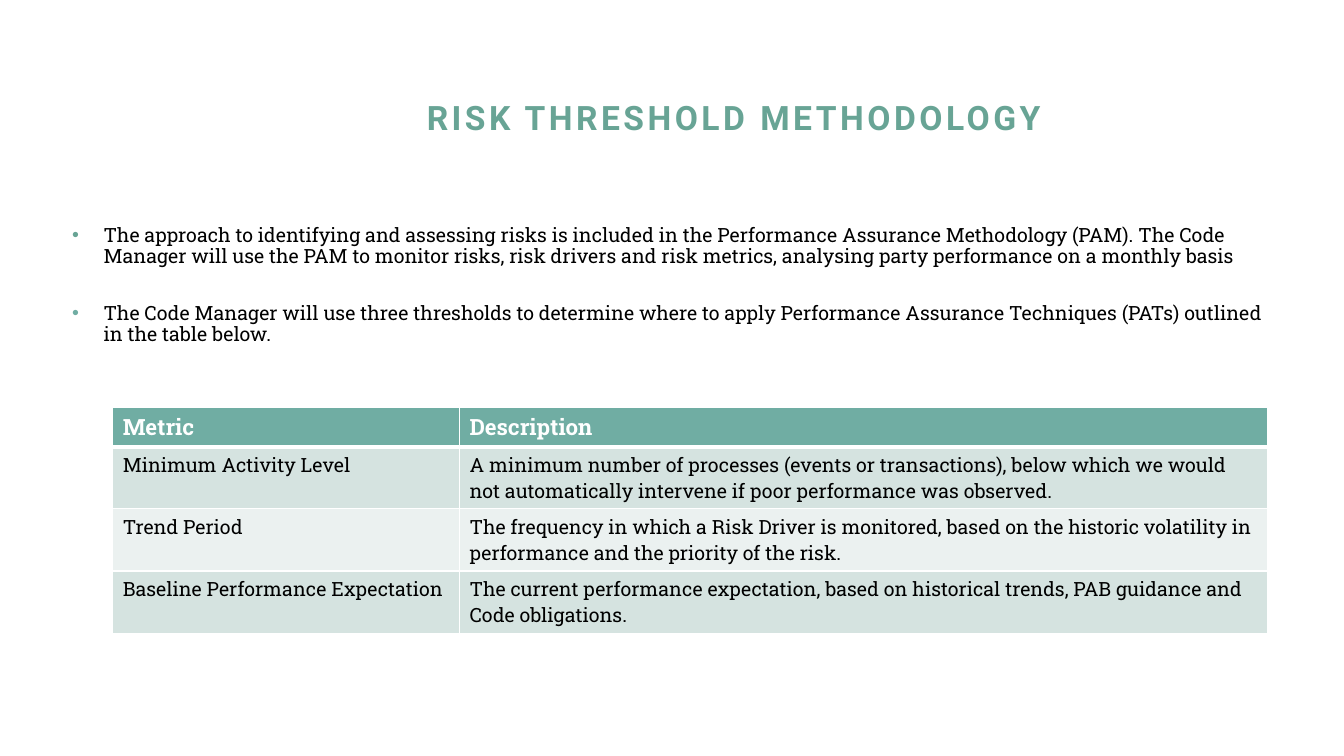
from dataclasses import dataclass

import pptx
import pptx.dml.color
import pptx.enum.text
import pptx.oxml
import pptx.oxml.ns
import pptx.util
from pptx.util import Cm


@dataclass(frozen=True)
class Theme:
    heading_font: str = "Roboto"
    body_font: str = "Roboto Slab"
    title: str = "68A495"
    header: str = "70ADA3"
    bands: tuple = ("D5E3E0", "EBF1F0")
    text: str = "000000"
    white: str = "FFFFFF"
    title_size: int = 24
    header_size: int = 16
    body_size: int = 14


THEME = Theme()

BULLETS = [
    ("The approach to identifying and assessing risks is included in the Performance Assurance "
     "Methodology (PAM). The Code Manager will use the PAM to monitor risks, risk drivers and "
     "risk metrics, analysing party performance on a monthly basis", THEME.title),
    ("The Code Manager will use three thresholds to determine where to apply Performance "
     "Assurance Techniques (PATs) outlined in the table below.", THEME.header),
]

METRICS = [
    ("Metric", "Description"),
    ("Minimum Activity Level",
     "A minimum number of processes (events or transactions), below which we would not "
     "automatically intervene if poor performance was observed."),
    ("Trend Period",
     "The frequency in which a Risk Driver is monitored, based on the historic volatility in "
     "performance and the priority of the risk."),
    ("Baseline Performance Expectation",
     "The current performance expectation, based on historical trends, PAB guidance and "
     "Code obligations."),
]


def rgb(color):
    return pptx.dml.color.RGBColor.from_string(color)


def add_xml(parent, xml):
    namespace = pptx.oxml.ns.nsdecls("a")
    parent.append(pptx.oxml.parse_xml(xml.replace("/>", f" {namespace}/>", 1)
                                      if xml.endswith("/>") else
                                      xml.replace(">", f" {namespace}>", 1)))


def set_font(font, name, size, color, bold=False):
    font.name = name
    font.size = pptx.util.Pt(size)
    font.bold = bold
    font.color.rgb = rgb(color)


def set_title(page, text):
    title = page.shapes.title
    title.left, title.top, title.width, title.height = Cm(5.82), Cm(2.31), Cm(24.08), Cm(1.88)
    frame = title.text_frame
    frame.text = text
    frame.auto_size = pptx.enum.text.MSO_AUTO_SIZE.NONE
    frame.vertical_anchor = pptx.enum.text.MSO_ANCHOR.TOP
    para = frame.paragraphs[0]
    para.alignment = pptx.enum.text.PP_ALIGN.CENTER
    properties = para._p.get_or_add_pPr()
    properties.set("marL", str(Cm(1.27)))
    properties.set("indent", "0")
    set_font(para.font, THEME.heading_font, THEME.title_size, THEME.title, True)
    para.runs[0].font._element.set("spc", "250")


def add_bullets(page, bullets):
    box = page.shapes.add_textbox(Cm(1.57), Cm(5.56), Cm(30.71), Cm(11.33))
    frame = box.text_frame
    frame.word_wrap = True
    for index, (text, color) in enumerate(bullets):
        para = frame.add_paragraph() if index else frame.paragraphs[0]
        para.text = text
        para.line_spacing = 0.9
        if index:
            para.space_before = pptx.util.Pt(25.5)
        properties = para._p.get_or_add_pPr()
        properties.set("marL", str(Cm(0.79)))
        properties.set("indent", str(-Cm(0.79)))
        add_xml(properties, f'<a:buClr><a:srgbClr val="{color}"/></a:buClr>')
        add_xml(properties, '<a:buFont typeface="Arial"/>')
        add_xml(properties, '<a:buChar char="•"/>')
        set_font(para.font, THEME.body_font, THEME.body_size, THEME.text)


def set_borders(cell, top, bottom):
    properties = cell._tc.get_or_add_tcPr()
    for side, points in (("L", 1), ("R", 1), ("T", top), ("B", bottom)):
        add_xml(properties, f'<a:ln{side} w="{pptx.util.Pt(points)}"><a:solidFill>'
                            f'<a:srgbClr val="{THEME.white}"/></a:solidFill></a:ln{side}>')


def add_metric_table(page, rows):
    widths = (Cm(8.74), Cm(20.37))
    heights = [Cm(0.91)] + [Cm(1.55)] * (len(rows) - 1)
    table = page.shapes.add_table(len(rows), len(widths), Cm(2.84), Cm(10.26),
                                  sum(widths), sum(heights)).table
    for column, width in zip(table.columns, widths):
        column.width = width
    for index, (texts, height) in enumerate(zip(rows, heights)):
        table.rows[index].height = height
        is_header = index == 0
        fill = THEME.header if is_header else THEME.bands[(index - 1) % 2]
        for cell, text in zip(table.rows[index].cells, texts):
            cell.text = text
            set_borders(cell, 3 if index == 1 else 1, 3 if is_header else 1)
            cell.fill.solid()
            cell.fill.fore_color.rgb = rgb(fill)
            set_font(cell.text_frame.paragraphs[0].font, THEME.body_font,
                     THEME.header_size if is_header else THEME.body_size,
                     THEME.white if is_header else THEME.text, is_header)


def main():
    deck = pptx.Presentation()
    deck.slide_width, deck.slide_height = Cm(33.87), Cm(19.05)
    page = deck.slides.add_slide(deck.slide_layouts.get_by_name("Title Only"))
    page.background.fill.solid()
    page.background.fill.fore_color.rgb = rgb(THEME.white)
    set_title(page, "RISK THRESHOLD METHODOLOGY")
    add_metric_table(page, METRICS)
    add_bullets(page, BULLETS)
    deck.save("out.pptx")


if __name__ == "__main__":
    main()
